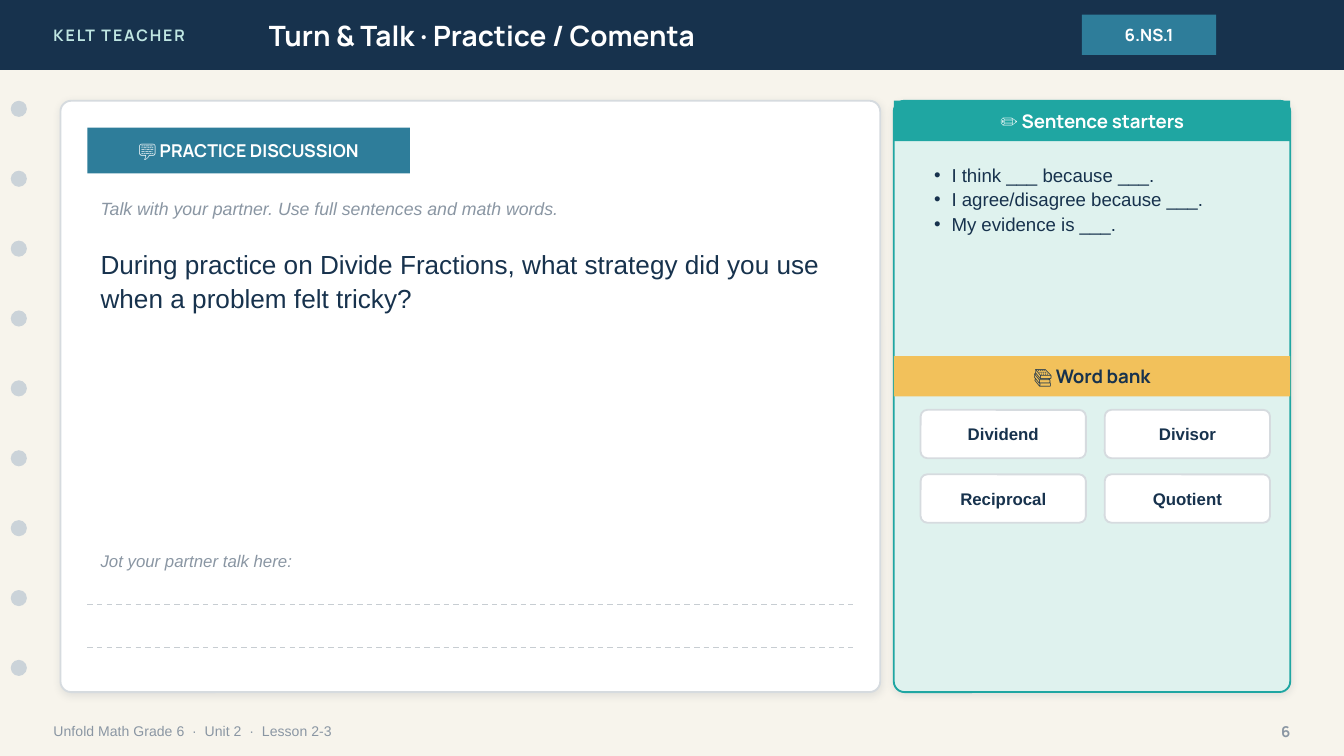
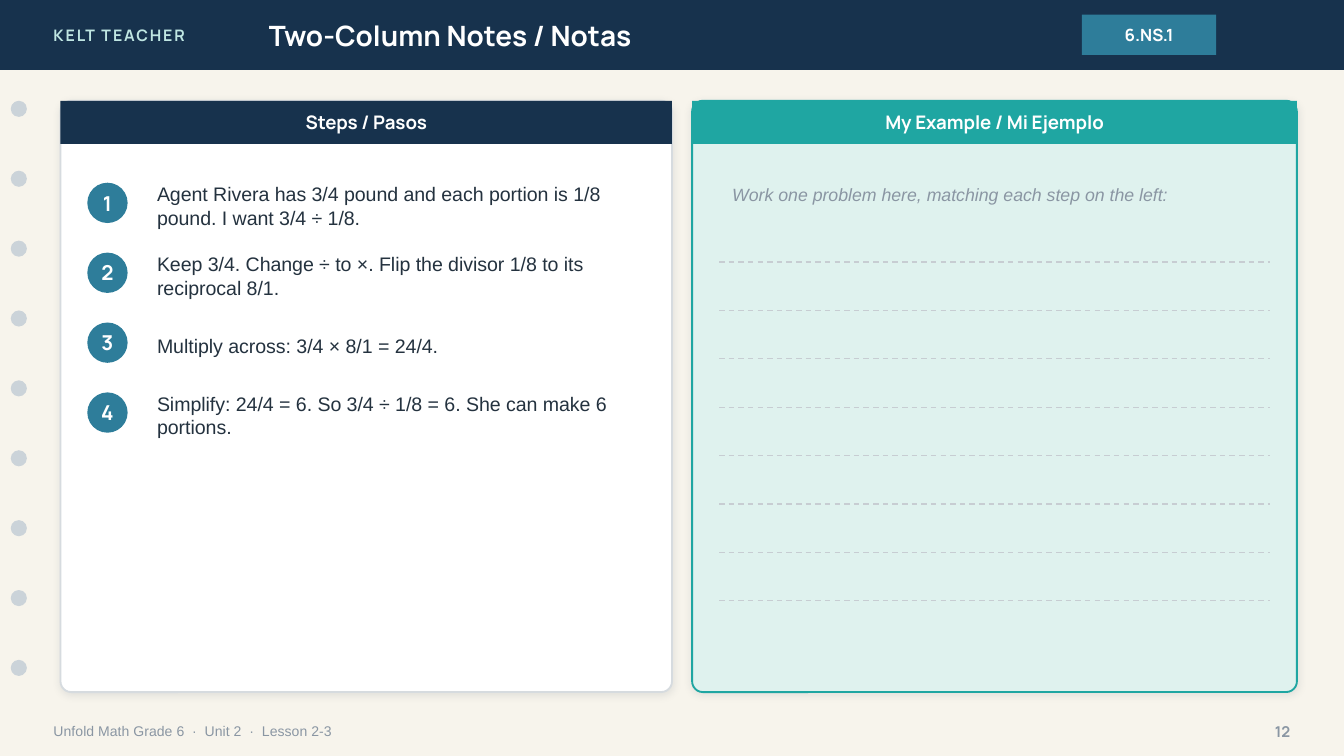
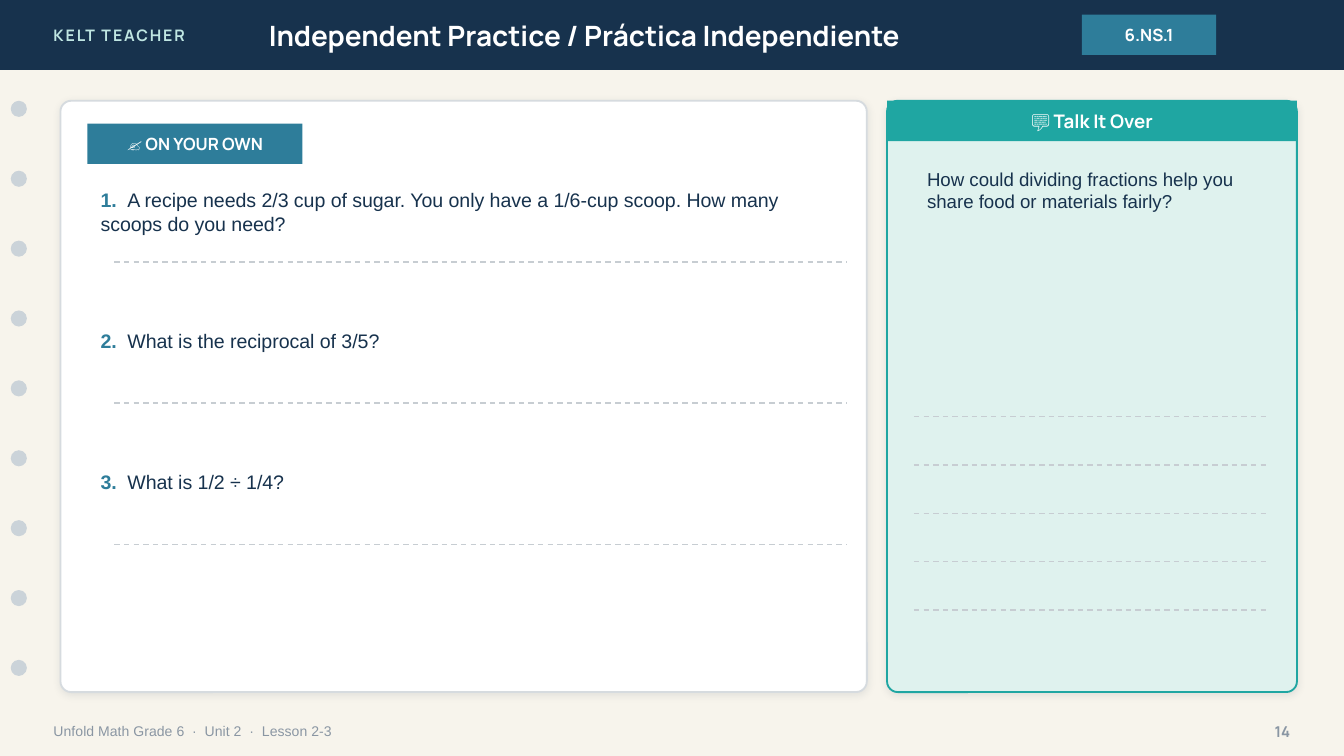
from lxml.etree import SubElement
from pptx import Presentation
from pptx.dml.color import RGBColor
from pptx.enum.dml import MSO_LINE_DASH_STYLE as Dash
from pptx.enum.shapes import MSO_CONNECTOR, MSO_SHAPE as Preset
from pptx.enum.text import MSO_ANCHOR as Anchor, MSO_AUTO_SIZE, PP_ALIGN as Align
from pptx.oxml.ns import qn
from pptx.util import Inches, Pt

COLORS = {
    "paper": "F7F4EC",
    "navy": "17324D",
    "blue": "2E7D9A",
    "teal": "1FA6A2",
    "mint": "DFF2EE",
    "pale_mint": "BFE6E2",
    "gold": "F2C15B",
    "white": "FFFFFF",
    "ink": "24323F",
    "muted": "8A96A3",
    "hole": "CBD3D9",
    "border": "D6DBDF",
    "rule": "C7CDD2",
    "shadow": "1C2E42",
}
DISPLAY = "Manrope"
BODY = "Arial"
PANEL_TOP = 0.75
PANEL_HEIGHT = 4.4


def rgb(name):
    return RGBColor.from_string(COLORS[name])


class Lesson:
    def __init__(self):
        self.deck = Presentation()
        self.deck.slide_width = Inches(10)
        self.deck.slide_height = Inches(10 * 9 / 16)
        background = self.deck.slide_master.background.fill
        background.solid()
        background.fore_color.rgb = rgb("paper")
        self.slide = None

    def start(self, title, number, layout="Title Only"):
        chosen = self.deck.slide_layouts.get_by_name(layout)
        self.slide = self.deck.slides.add_slide(chosen)
        self.shape(0, 0, 10, 0.52, "navy")
        self.text(0.3, 0, 2.4, 0.52, ["KELT TEACHER"], 8.5, "pale_mint", DISPLAY,
                  bold=True, tracking=1)
        heading = self.slide.shapes.title
        self.slide.shapes._spTree.append(heading._element)
        self.place(heading, 1.9, 0, 5.6, 0.52)
        self.set_text(heading, [title], 15, "white", DISPLAY, bold=True)
        self.label(8.05, 0.11, 1, 0.3, "6.NS.1", 9)
        for hole in range(9):
            self.shape(0.08, 0.75 + 0.52 * hole, 0.12, 0.12, "hole", Preset.OVAL)
        self.text(0.3, 5.3, 7, 0.28, ["Unfold Math Grade 6  ·  Unit 2  ·  Lesson 2-3"],
                  7.5, "muted")
        self.text(9.2, 5.3, 0.5, 0.28, [str(number)], 8, "muted", DISPLAY,
                  bold=True, align=Align.RIGHT)

    def place(self, shape, left, top, width, height):
        shape.left, shape.top = Inches(left), Inches(top)
        shape.width, shape.height = Inches(width), Inches(height)

    def set_text(self, shape, lines, size, color, font=BODY, bold=False, italic=False,
                 align=Align.LEFT, anchor=Anchor.MIDDLE, spacing=1.0, tracking=0,
                 bullet=False):
        frame = shape.text_frame
        frame.word_wrap = True
        frame.auto_size = MSO_AUTO_SIZE.NONE
        frame.vertical_anchor = anchor
        frame.text = "\n".join(lines)
        for paragraph in frame.paragraphs:
            paragraph.alignment = align
            paragraph.line_spacing = spacing
            paragraph.space_before = Pt(0)
            if bullet:
                properties = paragraph._p.get_or_add_pPr()
                properties.set("marL", str(Inches(0.13)))
                properties.set("indent", str(-Inches(0.13)))
                SubElement(properties, qn("a:buChar"), char="•")
            style = paragraph.font
            style.size, style.name = Pt(size), font
            style.bold, style.italic = bold, italic
            style.color.rgb = rgb(color)
            if tracking:
                style._rPr.set("spc", str(tracking * 100))

    def text(self, left, top, width, height, lines, size, color, font=BODY, **style):
        box = self.slide.shapes.add_textbox(
            Inches(left), Inches(top), Inches(width), Inches(height))
        self.set_text(box, lines, size, color, font, **style)

    def shape(self, left, top, width, height, fill, preset=Preset.RECTANGLE,
              border=None, radius=None):
        item = self.slide.shapes.add_shape(
            preset, Inches(left), Inches(top), Inches(width), Inches(height))
        item.shadow.inherit = False
        item.fill.solid()
        item.fill.fore_color.rgb = rgb(fill)
        if border:
            item.line.color.rgb = rgb(border)
            item.line.width = Pt(1)
        else:
            item.line.fill.background()
        if radius:
            item.adjustments[0] = radius / min(width, height)
        return item

    def label(self, left, top, width, height, words, size, fill="blue", color="white"):
        banner = self.shape(left, top, width, height, fill)
        self.set_text(banner, [words], size, color, DISPLAY, bold=True, align=Align.CENTER)

    def panel(self, left, width, fill="white", border="border"):
        card = self.shape(left, PANEL_TOP, width, PANEL_HEIGHT, fill,
                          Preset.ROUNDED_RECTANGLE, border, radius=0.08)
        effects = card._element.spPr.find(qn("a:effectLst"))
        shadow = SubElement(effects, qn("a:outerShdw"), blurRad=str(Pt(4)),
                            dist=str(Pt(1)), dir="5400000", algn="bl", rotWithShape="0")
        tint = SubElement(shadow, qn("a:srgbClr"), val=COLORS["shadow"])
        SubElement(tint, qn("a:alpha"), val="10000")

    def chip(self, left, top, word):
        card = self.shape(left, top, 1.23, 0.36, "white",
                          Preset.ROUNDED_RECTANGLE, "border", radius=0.05)
        self.set_text(card, [word], 9, "navy", bold=True, align=Align.CENTER)

    def badge(self, left, top, number):
        disc = self.shape(left, top, 0.3, 0.3, "blue", Preset.OVAL)
        frame = disc.text_frame
        frame.margin_left = frame.margin_right = frame.margin_top = frame.margin_bottom = 0
        self.set_text(disc, [str(number)], 11, "white", DISPLAY, bold=True,
                      align=Align.CENTER)

    def bullets(self, left, top, width, height, lines, size, color):
        body = self.slide.placeholders[1]
        self.slide.shapes._spTree.append(body._element)
        self.place(body, left, top, width, height)
        self.set_text(body, lines, size, color, anchor=Anchor.TOP, spacing=1.1, bullet=True)

    def question(self, left, top, width, height, number, words):
        box = self.slide.shapes.add_textbox(
            Inches(left), Inches(top), Inches(width), Inches(height))
        box.text_frame.word_wrap = True
        paragraph = box.text_frame.paragraphs[0]
        tabs = SubElement(paragraph._p.get_or_add_pPr(), qn("a:tabLst"))
        SubElement(tabs, qn("a:tab"), pos=str(Inches(0.2)), algn="l")
        paragraph.font.size, paragraph.font.name = Pt(10.5), BODY
        for part, color, bold in ((f"{number}.\t", "blue", True), (words, "navy", False)):
            run = paragraph.add_run()
            run.text = part
            run.font.bold = bold
            run.font.color.rgb = rgb(color)

    def writing_lines(self, left, right, top, count=1, gap=0.36):
        for row in range(count):
            y = Inches(top + gap * row)
            rule = self.slide.shapes.add_connector(
                MSO_CONNECTOR.STRAIGHT, Inches(left), y, Inches(right), y)
            rule.line.color.rgb = rgb("rule")
            rule.line.width = Pt(0.75)
            rule.line.dash_style = Dash.DASH
            SubElement(rule._element.spPr, qn("a:effectLst"))


def turn_and_talk(lesson):
    lesson.start("Turn & Talk · Practice / Comenta", 6, "Title and Content")
    lesson.panel(0.45, 6.1)
    lesson.label(0.65, 0.95, 2.4, 0.34, "💬 PRACTICE DISCUSSION", 9.5)
    lesson.text(0.65, 1.4, 5.7, 0.3,
                ["Talk with your partner. Use full sentences and math words."],
                9.5, "muted", italic=True)
    lesson.text(0.65, 1.78, 5.7, 2,
                ["During practice on Divide Fractions, what strategy did you use "
                 "when a problem felt tricky?"],
                14, "navy", anchor=Anchor.TOP, spacing=1.08)
    lesson.text(0.65, 4.05, 5.7, 0.25, ["Jot your partner talk here:"], 9, "muted", italic=True)
    lesson.writing_lines(0.65, 6.35, 4.5, count=2, gap=0.32)

    lesson.panel(6.65, 2.95, "mint", "teal")
    lesson.label(6.65, PANEL_TOP, 2.95, 0.3, "✏️ Sentence starters", 10, "teal")
    lesson.bullets(6.85, 1.15, 2.6, 1.4,
                   ["I think ___ because ___.",
                    "I agree/disagree because ___.",
                    "My evidence is ___."], 10, "navy")
    lesson.label(6.65, 2.65, 2.95, 0.3, "📚 Word bank", 10, "gold", "navy")
    for index, word in enumerate(["Dividend", "Divisor", "Reciprocal", "Quotient"]):
        row, column = divmod(index, 2)
        lesson.chip(6.85 + 1.37 * column, 3.05 + 0.48 * row, word)


def two_column_notes(lesson):
    lesson.start("Two-Column Notes / Notas", 12)
    lesson.panel(0.45, 4.55)
    lesson.label(0.45, PANEL_TOP, 4.55, 0.32, "Steps / Pasos", 10, "navy")
    steps = [
        "Agent Rivera has 3/4 pound and each portion is 1/8 pound. I want 3/4 ÷ 1/8.",
        "Keep 3/4. Change ÷ to ×. Flip the divisor 1/8 to its reciprocal 8/1.",
        "Multiply across: 3/4 × 8/1 = 24/4.",
        "Simplify: 24/4 = 6. So 3/4 ÷ 1/8 = 6. She can make 6 portions.",
    ]
    for index, step in enumerate(steps):
        top = 1.3 + 0.52 * index
        lesson.badge(0.65, top + 0.06, index + 1)
        lesson.text(1.07, top, 3.78, 0.46, [step], 10.5, "ink")

    lesson.panel(5.15, 4.5, "mint", "teal")
    lesson.label(5.15, PANEL_TOP, 4.5, 0.32, "My Example / Mi Ejemplo", 10, "teal")
    lesson.text(5.35, 1.25, 4.1, 0.4,
                ["Work one problem here, matching each step on the left:"],
                9.5, "muted", italic=True)
    lesson.writing_lines(5.35, 9.45, 1.95, count=8)


def independent_practice(lesson):
    lesson.start("Independent Practice / Práctica Independiente", 14)
    lesson.panel(0.45, 6)
    lesson.label(0.65, 0.92, 1.6, 0.3, "✍️ ON YOUR OWN", 9)
    questions = [
        "A recipe needs 2/3 cup of sugar. You only have a 1/6-cup scoop. "
        "How many scoops do you need?",
        "What is the reciprocal of 3/5?",
        "What is 1/2 ÷ 1/4?",
    ]
    for index, words in enumerate(questions):
        top = 1.35 + 1.05 * index
        lesson.question(0.65, top, 5.65, 0.5, index + 1, words)
        lesson.writing_lines(0.85, 6.3, top + 0.6)

    lesson.panel(6.6, 3.05, "mint", "teal")
    lesson.label(6.6, PANEL_TOP, 3.05, 0.3, "💬 Talk It Over", 10, "teal")
    lesson.text(6.8, 1.2, 2.7, 1.7,
                ["How could dividing fractions help you share food or materials fairly?"],
                10, "navy", anchor=Anchor.TOP)
    lesson.writing_lines(6.8, 9.45, 3.1, count=5)


def main():
    lesson = Lesson()
    turn_and_talk(lesson)
    two_column_notes(lesson)
    independent_practice(lesson)
    lesson.deck.save("out.pptx")


if __name__ == "__main__":
    main()
